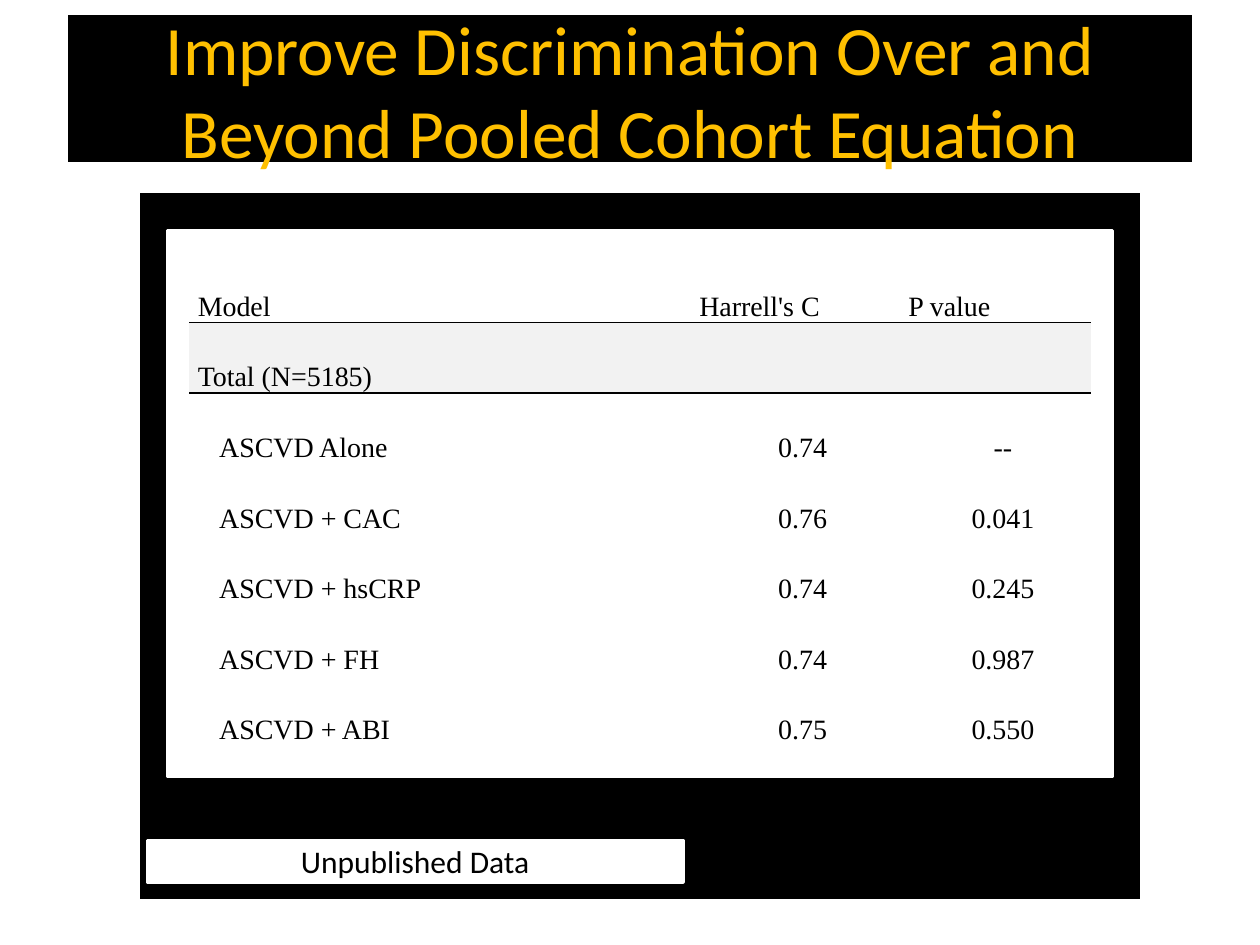
from dataclasses import dataclass
from typing import Optional

from lxml.etree import SubElement
from pptx import Presentation
from pptx.dml.color import RGBColor
from pptx.enum.shapes import MSO_SHAPE as Shape
from pptx.enum.text import MSO_ANCHOR as Anchor, PP_ALIGN as Align
from pptx.oxml import parse_xml
from pptx.oxml.ns import nsdecls, qn
from pptx.util import Inches, Pt


@dataclass(frozen=True)
class Theme:
    black: str = "000000"
    white: str = "FFFFFF"
    gold: str = "FFC000"
    band: str = "F2F2F2"
    sans: str = "Calibri"
    serif: str = "Times New Roman"
    title_size: float = 39.6
    note_size: float = 18
    table_size: float = 16


@dataclass(frozen=True)
class Panel:
    left: float
    top: float
    width: float
    height: float
    fill: str
    border: float


@dataclass(frozen=True)
class ModelRow:
    name: str
    harrell_c: str
    p_value: str


THEME = Theme()
BACKDROP = Panel(1.08, 1.5, 8, 5.67, THEME.black, 4.5)
TABLE_PANEL = Panel(1.33, 1.83, 7.5, 4.33, THEME.white, 2)
TITLE = Panel(0.5, 0.08, 9, 1.25, THEME.black, 6)
NOTE = Panel(1.17, 6.67, 4.25, 0.33, THEME.white, 2)

MODELS = [
    ModelRow("ASCVD Alone", "0.74", "--"),
    ModelRow("ASCVD + CAC", "0.76", "0.041"),
    ModelRow("ASCVD + hsCRP", "0.74", "0.245"),
    ModelRow("ASCVD + FH", "0.74", "0.987"),
    ModelRow("ASCVD + ABI", "0.75", "0.550"),
]
COLUMN_WIDTHS = (3.98, 1.6, 0.18, 1.4)
ROW_HEIGHT = 0.56
CELL_MARGIN = 0.07
NAME_INDENT = 0.17
P_VALUE_INDENT = 0.06
NO_STYLE_ID = "{2D5ABB26-0587-4C30-8999-92F81FD0307C}"


def write_text(frame, text: str, *, size: float, font: str, color: str,
               align: Align = Align.LEFT) -> None:
    para = frame.paragraphs[0]
    para.alignment = align
    span = para.add_run()
    span.text = text
    span.font.size = Pt(size)
    span.font.name = font
    span.font.color.rgb = RGBColor.from_string(color)


def draw_panel(page, panel: Panel):
    box = page.shapes.add_shape(
        Shape.RECTANGLE, Inches(panel.left), Inches(panel.top),
        Inches(panel.width), Inches(panel.height))
    box.shadow.inherit = False
    box.fill.solid()
    box.fill.fore_color.rgb = RGBColor.from_string(panel.fill)
    box.line.color.rgb = RGBColor.from_string(THEME.white)
    box.line.width = Pt(panel.border)
    box.text_frame.word_wrap = True
    box.text_frame.vertical_anchor = Anchor.MIDDLE
    return box


def fill_cell(cell, text: str = "", *, align: Align = Align.LEFT,
              indent: float = 0, fill: Optional[str] = None) -> None:
    cell.vertical_anchor = Anchor.BOTTOM
    cell.margin_left = Inches(CELL_MARGIN + indent)
    cell.margin_right = Inches(CELL_MARGIN)
    cell.margin_top = cell.margin_bottom = 0
    if fill:
        cell.fill.solid()
        cell.fill.fore_color.rgb = RGBColor.from_string(fill)
    else:
        cell.fill.background()
    if text:
        write_text(cell.text_frame, text, size=THEME.table_size,
                   font=THEME.serif, color=THEME.black, align=align)


def rule_cell(cell, side: str) -> None:
    """Draw a thin black border on one side: "lnT" or "lnB"."""
    line = parse_xml(f'<a:{side} {nsdecls("a")} w="{Pt(1)}"/>')
    solid = SubElement(line, qn("a:solidFill"))
    SubElement(solid, qn("a:srgbClr"), val=THEME.black)
    cell._tc.get_or_add_tcPr().insert(0, line)


def draw_table(page) -> None:
    row_count = len(MODELS) + 2
    frame = page.shapes.add_table(
        row_count, len(COLUMN_WIDTHS), Inches(1.5), Inches(2),
        Inches(sum(COLUMN_WIDTHS)), Inches(ROW_HEIGHT * row_count))
    table = frame.table
    table.first_row = table.horz_banding = False
    table._tbl.tblPr.find(qn("a:tableStyleId")).text = NO_STYLE_ID
    for column, width in zip(table.columns, COLUMN_WIDTHS):
        column.width = Inches(width)
    for row in table.rows:
        row.height = Inches(ROW_HEIGHT)

    table.cell(0, 2).merge(table.cell(0, 3))
    for index in range(1, row_count):
        table.cell(index, 1).merge(table.cell(index, 2))

    fill_cell(table.cell(0, 0), "Model")
    fill_cell(table.cell(0, 1), "Harrell's C")
    fill_cell(table.cell(0, 2), "P value", indent=P_VALUE_INDENT)
    fill_cell(table.cell(1, 0), "Total (N=5185)", fill=THEME.band)
    for column in (1, 3):
        fill_cell(table.cell(1, column), fill=THEME.band)
    for index, model in enumerate(MODELS, start=2):
        fill_cell(table.cell(index, 0), model.name, indent=NAME_INDENT)
        fill_cell(table.cell(index, 1), model.harrell_c, align=Align.CENTER)
        fill_cell(table.cell(index, 3), model.p_value, align=Align.CENTER)

    for column in range(len(COLUMN_WIDTHS)):
        rule_cell(table.cell(0, column), "lnB")
        rule_cell(table.cell(1, column), "lnT")


def main() -> None:
    deck = Presentation()
    deck.slide_width, deck.slide_height = Inches(10), Inches(7.5)
    page = deck.slides.add_slide(deck.slide_layouts[6])

    draw_panel(page, BACKDROP)
    draw_panel(page, TABLE_PANEL)
    title = draw_panel(page, TITLE)
    write_text(title.text_frame,
               "Improve Discrimination Over and Beyond Pooled Cohort Equation",
               size=THEME.title_size, font=THEME.sans, color=THEME.gold,
               align=Align.CENTER)
    draw_table(page)
    note = draw_panel(page, NOTE)
    write_text(note.text_frame, "Unpublished Data", size=THEME.note_size,
               font=THEME.sans, color=THEME.black, align=Align.CENTER)

    deck.save("out.pptx")


if __name__ == "__main__":
    main()
